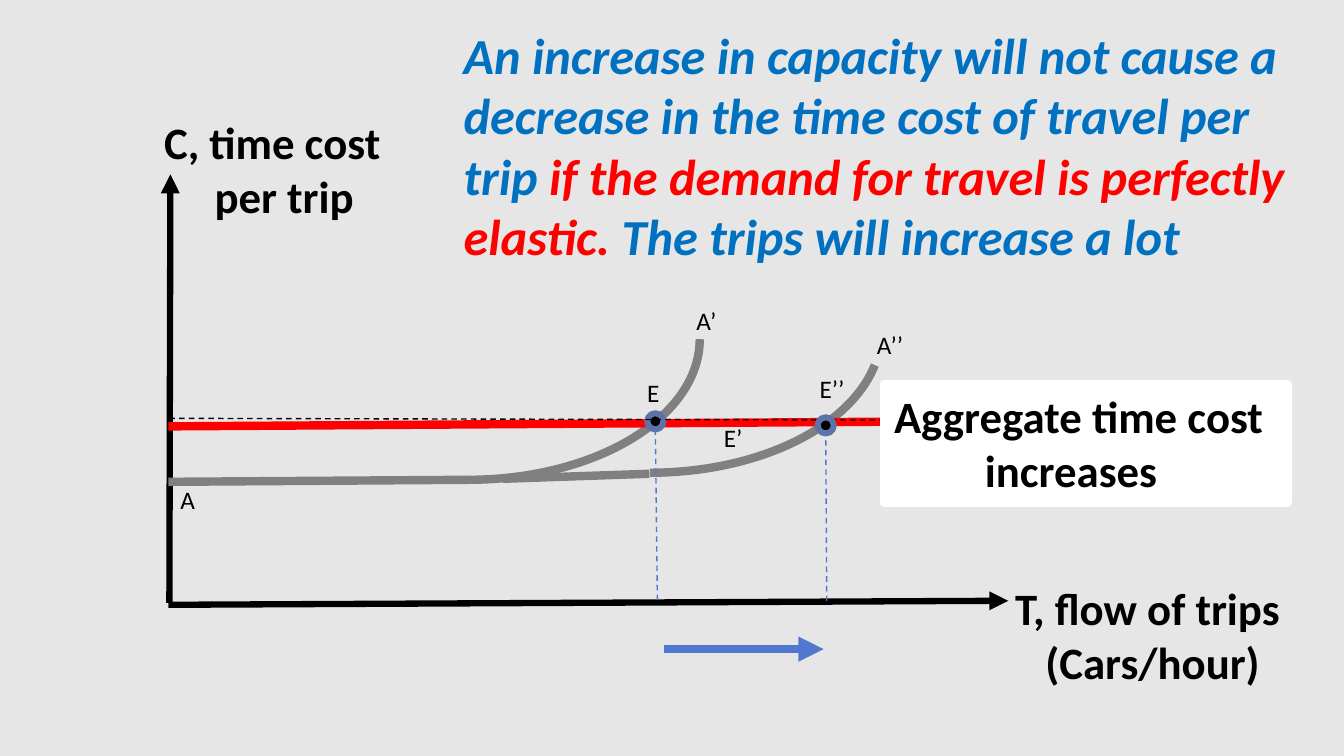
"""Build a slide on how road capacity affects trips under perfectly elastic demand."""
from dataclasses import dataclass

from lxml.etree import SubElement
from pptx import Presentation
from pptx.dml.color import RGBColor
from pptx.enum.dml import MSO_LINE
from pptx.enum.shapes import MSO_CONNECTOR, MSO_SHAPE
from pptx.enum.text import MSO_ANCHOR, MSO_AUTO_SIZE, PP_ALIGN
from pptx.oxml.ns import qn
from pptx.util import Inches, Pt

HUES = {"back": "E7E6E6", "black": "000000", "white": "FFFFFF", "gray": "808080",
        "red": "FF0000", "ring": "5D72A9", "blue": "4F78CE", "title": "0070C0"}


@dataclass
class Line:
    start: tuple[float, float]
    end: tuple[float, float]
    hue: str
    width: float
    dash: bool = False
    arrow: bool = False


@dataclass
class Curve:
    left: float
    top: float
    stop: float = 0


@dataclass
class Dot:
    left: float
    top: float


@dataclass
class Label:
    left: float
    top: float
    width: float
    height: float
    lines: list[list[tuple[str, str]]]
    size: int = 32
    bold: bool = True
    slant: bool = False
    wrap: bool = False
    indent: float = 0
    panel: bool = False


def tag(text: str, left: float, top: float, width: float) -> Label:
    return Label(left, top, width, 0.4, [[(text, "black")]], 18, False)


def pair(first: str, second: str) -> list[list[tuple[str, str]]]:
    return [[(first, "black")], [(second, "black")]]


SCENE = [
    Line((1.68, 5.98), (1.69, 1.73), "black", 4.5, arrow=True),
    Line((1.67, 6), (10, 5.96), "black", 4.5, arrow=True),
    Line((1.67, 4.78), (4.65, 4.76), "gray", 6),
    Curve(2.35, 1.97),
    Line((4.99, 4.75), (6.44, 4.7), "gray", 6),
    Curve(4.15, 1.9, 210.99),
    Line((1.67, 4.23), (9.36, 4.18), "red", 6),
    Dot(6.42, 4.1),
    Line((1.68, 4.15), (9.83, 4.17), "black", 1, dash=True),
    Dot(8.11, 4.14),
    tag("A", 1.69, 4.76, 0.35),
    tag("E’", 7.08, 4.14, 0.39),
    tag("E", 6.32, 3.69, 0.32),
    tag("E’’", 8.03, 3.65, 0.45),
    tag("A’", 6.81, 2.98, 0.4),
    tag("A’’", 8.6, 3.22, 0.46),
    Label(9.97, 5.71, 2.86, 1.18, pair("T, flow of trips", "(Cars/hour)"), indent=0.3),
    Label(1.53, 1.09, 2.95, 1.18, pair("C, time cost", "per trip"), wrap=True, indent=0.5),
    Label(4.5, 0.19, 8.46, 3, [[
        ("An increase in capacity will not cause a decrease in the time cost of travel per trip ",
         "title"),
        ("if the demand for travel is perfectly elastic. ", "red"),
        ("The trips will increase a lot", "title")]], 36, slant=True, wrap=True),
    Line((6.5, 4.26), (6.52, 5.95), "blue", 1, dash=True),
    Line((8.19, 4.27), (8.2, 5.96), "blue", 1, dash=True),
    Line((6.59, 6.44), (8.17, 6.44), "blue", 6, arrow=True),
    Label(8.77, 3.81, 4, 1.18, pair("Aggregate time cost", "increases"), indent=0.9, panel=True),
]


def tint(name: str) -> RGBColor:
    return RGBColor.from_string(HUES[name])


def stroke(shape, hue: str, width: float) -> None:
    shape.line.color.rgb = tint(hue)
    shape.line.width = Pt(width)


def paint(shape, hue: str) -> None:
    shape.fill.solid()
    shape.fill.fore_color.rgb = tint(hue)


def form(shapes, kind, left: float, top: float, width: float, height: float):
    shape = shapes.add_shape(kind, Inches(left), Inches(top), Inches(width), Inches(height))
    shape.shadow.inherit = False
    return shape


def draw_line(shapes, item: Line) -> None:
    ends = [Inches(value) for value in item.start + item.end]
    line = shapes.add_connector(MSO_CONNECTOR.STRAIGHT, *ends)
    stroke(line, item.hue, item.width)
    if item.dash:
        line.line.dash_style = MSO_LINE.DASH
    if item.arrow:
        SubElement(line.get_or_add_ln(), qn("a:tailEnd"), type="triangle")
    SubElement(line.element.spPr, qn("a:effectLst"))


def draw_curve(shapes, item: Curve) -> None:
    arc = form(shapes, MSO_SHAPE.ARC, item.left, item.top, 4.59, 2.79)
    arc.adjustments[0] = 162
    arc.adjustments[1] = item.stop
    arc.element.spPr.find(qn("a:xfrm")).set("flipV", "1")
    arc.fill.background()
    stroke(arc, "gray", 6)


def draw_dot(shapes, item: Dot) -> None:
    dot = form(shapes, MSO_SHAPE.FLOWCHART_CONNECTOR, item.left, item.top, 0.16, 0.16)
    paint(dot, "black")
    stroke(dot, "ring", 4.33)


def draw_label(shapes, item: Label) -> None:
    area = item.left, item.top, item.width, item.height
    if item.panel:
        box = form(shapes, MSO_SHAPE.RECTANGLE, *area)
        paint(box, "white")
        stroke(box, "white", 6)
    else:
        box = shapes.add_textbox(*[Inches(value) for value in area])
    frame = box.text_frame
    frame.word_wrap = item.wrap
    frame.auto_size = MSO_AUTO_SIZE.SHAPE_TO_FIT_TEXT
    frame.vertical_anchor = MSO_ANCHOR.TOP
    for row, runs in enumerate(item.lines):
        para = frame.add_paragraph() if row else frame.paragraphs[0]
        para.alignment = PP_ALIGN.LEFT
        font = para.font
        font.name, font.size = "Calibri", Pt(item.size)
        font.bold, font.italic = item.bold, item.slant
        if row:
            para._p.get_or_add_pPr().set("marL", str(Inches(item.indent)))
        for text, hue in runs:
            run = para.add_run()
            run.text = text
            run.font.color.rgb = tint(hue)


DRAW = {Line: draw_line, Curve: draw_curve, Dot: draw_dot, Label: draw_label}


def main() -> None:
    deck = Presentation()
    deck.slide_width, deck.slide_height = Inches(13.33), Inches(7.5)
    slide = deck.slides.add_slide(deck.slide_layouts[6])
    paint(slide.background, "back")
    for item in SCENE:
        DRAW[type(item)](slide.shapes, item)
    deck.save("out.pptx")


if __name__ == "__main__":
    main()
